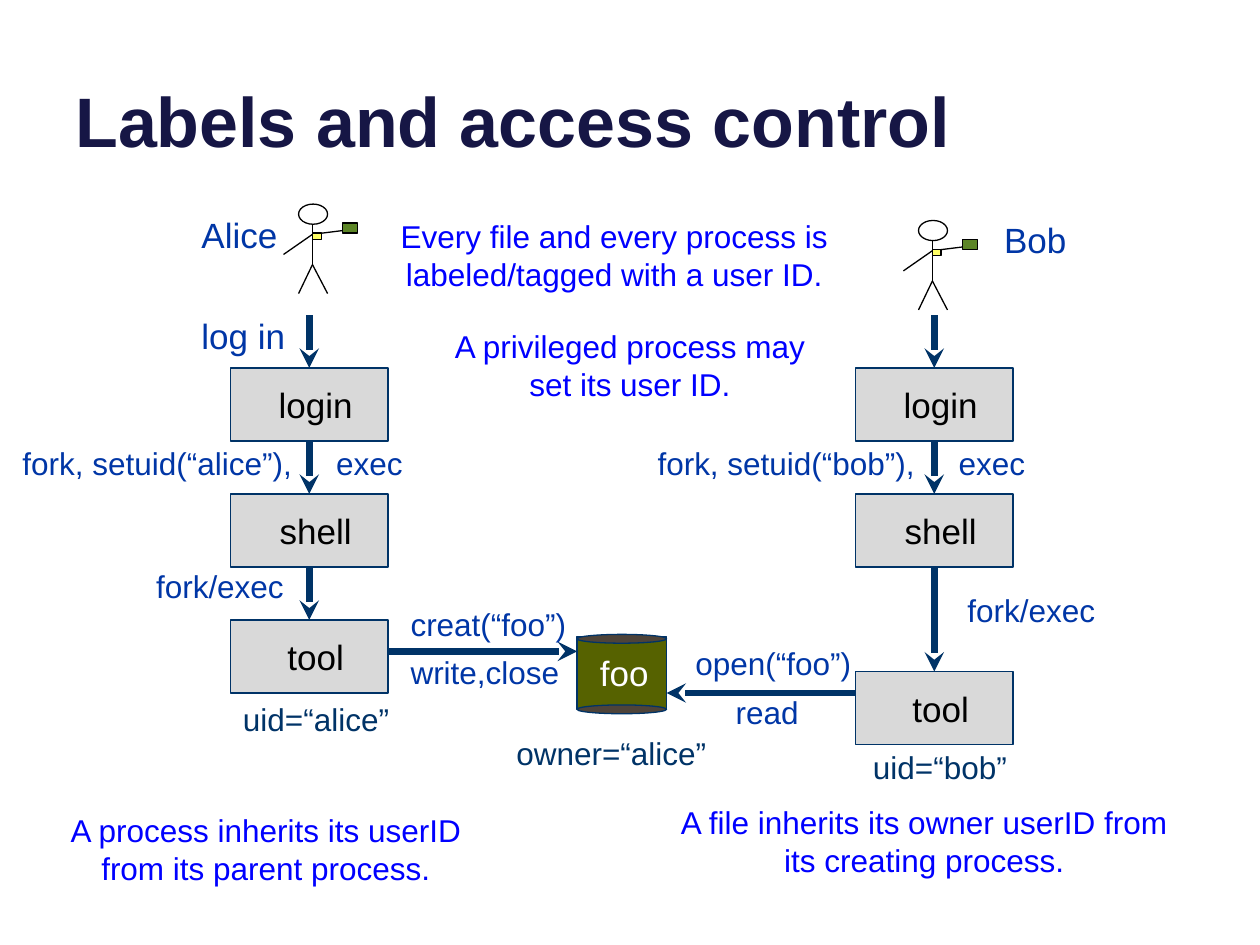
from dataclasses import dataclass

from lxml import etree
from pptx import Presentation
from pptx.dml.color import RGBColor
from pptx.enum.shapes import MSO_CONNECTOR, MSO_SHAPE as Shape
from pptx.enum.text import MSO_ANCHOR as Anchor, PP_ALIGN as Align
from pptx.oxml.ns import qn
from pptx.util import Inches, Pt


@dataclass(frozen=True)
class Theme:
    font: str = "Arial"
    title: str = "161645"
    navy: str = "003367"
    call: str = "0036A6"
    note: str = "0000FF"
    black: str = "000000"
    white: str = "FFFFFF"
    box: str = "D9D9D9"
    disk: str = "566200"
    cap: str = "4E4339"
    card: str = "5C8526"
    badge: str = "FFFF66"
    title_pt: int = 40
    large_pt: int = 20
    body_pt: int = 18
    thin: float = 0.75
    thick: float = 3.75


T = Theme()

TITLE = "Labels and access control"
BOX_W, BOX_H = 1.25, 0.58
FIRST_ARROW_Y = 2.5

# Each user: left edge of the process column, process boxes (name, top), neck of the figure
USERS = [
    (1.83, [("login", 2.92), ("shell", 3.92), ("tool", 4.92)], (2.48, 1.78)),
    (6.79, [("login", 2.92), ("shell", 3.92), ("tool", 5.33)], (7.4, 1.91)),
]

# Lines of the figure, measured from the neck
LIMBS = [
    ((0, 0), (0, 0.32)),
    ((-0.11, 0.55), (0, 0.32)),
    ((0.12, 0.55), (0, 0.32)),
    ((0.32, 0.04), (0, 0.08)),
    ((-0.23, 0.24), (0, 0.08)),
]
FIGURE_PARTS = [
    (Shape.OVAL, (-0.11, -0.16, 0.23, 0.16), None),
    (Shape.RECTANGLE, (0.24, -0.01, 0.12, 0.08), T.card),
    (Shape.RECTANGLE, (0, 0.07, 0.07, 0.05), T.badge),
]

DISK = (4.58, 5.05, 0.71, 0.58)
CAP_H = 0.07
FILE_ARROWS = [((3.08, 5.17), (4.58, 5.17)), ((6.79, 5.5), (5.29, 5.5))]

# Labels: text, left, top, width
NAMES = [
    ("Alice", 1.5, 1.7, 0.92),
    ("Bob", 7.87, 1.74, 0.92),
    ("log in", 1.5, 2.5, 0.92),
]
CALLS = [
    ("fork/exec", 1.14, 4.5, 1.25),
    ("creat(“foo”)", 3.16, 4.8, 1.59),
    ("write,close", 3.16, 5.18, 1.59),
    ("open(“foo”)", 5.42, 5.11, 1.59),
    ("read", 5.74, 5.5, 1.59),
    ("fork/exec", 7.58, 4.69, 1.25),
]
# The last number is the tab stop of the second word group
TABBED_CALLS = [
    ("fork, setuid(“alice”),\texec", 0.08, 3.52, 3.42, 2.49),
    ("fork, setuid(“bob”),\texec", 5.12, 3.52, 3.42, 2.39),
]
IDS = [
    ("owner=“alice”", 4, 5.82, 1.83),
    ("uid=“alice”", 1.83, 5.55, 1.83),
    ("uid=“bob”", 6.83, 5.93, 1.83),
]
NOTES = [
    ("Every file and every process is labeled/tagged with a user ID.", 2.75, 1.67, 4.25),
    ("A privileged process may set its user ID.", 3.5, 2.54, 3),
    ("A process inherits its userID from its parent process.", 0.42, 6.38, 3.38),
    ("A file inherits its owner userID from its creating process.", 5.25, 6.32, 4.17),
]


def rgb(color):
    return RGBColor.from_string(color)


def write(sp, text, size, color, bold=False, align=Align.LEFT,
          anchor=Anchor.TOP, spacing=None):
    tf = sp.text_frame
    tf.word_wrap = True
    tf.vertical_anchor = anchor
    p = tf.paragraphs[0]
    p.alignment = align
    if spacing:
        p.line_spacing = spacing
    r = p.add_run()
    r.text = text
    r.font.name, r.font.size, r.font.bold = T.font, Pt(size), bold
    r.font.color.rgb = rgb(color)
    return p


def add_text(s, text, box, size, color, **style):
    sp = s.shapes.add_textbox(*map(Inches, box))
    return write(sp, text, size, color, **style)


def add_label(s, text, x, y, w, size, color):
    height = 0.4 if size == T.large_pt else 0.37
    return add_text(s, text, (x, y, w, height), size, color, spacing=0.85)


def add_tab_stop(p, pos):
    tabs = etree.SubElement(p._p.get_or_add_pPr(), qn("a:tabLst"))
    etree.SubElement(tabs, qn("a:tab"), pos=str(Inches(pos)), algn="l")


def add_solid(shapes, kind, box, fill, line=T.navy):
    sp = shapes.add_shape(kind, *map(Inches, box))
    sp.shadow.inherit = False
    if fill:
        sp.fill.solid()
        sp.fill.fore_color.rgb = rgb(fill)
    else:
        sp.fill.background()
    sp.line.color.rgb = rgb(line)
    sp.line.width = Pt(T.thin)
    return sp


def add_line(shapes, start, end, color, width, arrow=False):
    c = shapes.add_connector(MSO_CONNECTOR.STRAIGHT, *map(Inches, (*start, *end)))
    c.line.color.rgb = rgb(color)
    c.line.width = Pt(width)
    if arrow:
        etree.SubElement(c.line._get_or_add_ln(), qn("a:tailEnd"), type="stealth")
    etree.SubElement(c._element.spPr, qn("a:effectLst"))


def add_caption(sp, text, color, shift):
    """Centre the text in a shape, moved right by shift inches."""
    tf = sp.text_frame
    tf.margin_left, tf.margin_right = Inches(0.05 + 2 * shift), Inches(0.05)
    write(sp, text, T.large_pt, color, align=Align.CENTER, anchor=Anchor.MIDDLE)


def add_process_column(s, left, processes):
    center, start = left + BOX_W / 2, FIRST_ARROW_Y
    for name, top in processes:
        sp = add_solid(s.shapes, Shape.RECTANGLE, (left, top, BOX_W, BOX_H), T.box)
        add_caption(sp, name, T.black, 0.05)
        add_line(s.shapes, (center, start), (center, top), T.navy, T.thick, arrow=True)
        start = top + BOX_H


def add_figure(s, neck):
    x, y = neck
    group = s.shapes.add_group_shape().shapes
    for (x1, y1), (x2, y2) in LIMBS:
        add_line(group, (x + x1, y + y1), (x + x2, y + y2), T.black, T.thin)
    for kind, (dx, dy, w, h), fill in FIGURE_PARTS:
        add_solid(group, kind, (x + dx, y + dy, w, h), fill, T.black)


def add_disk(s):
    x, y, w, h = DISK
    sp = add_solid(s.shapes, Shape.RECTANGLE, DISK, T.disk)
    add_caption(sp, "foo", T.white, 0.02)
    for edge in (y + 0.02, y + h):
        add_solid(s.shapes, Shape.OVAL, (x, edge - CAP_H / 2, w, CAP_H), T.cap)


def main():
    prs = Presentation()
    prs.slide_width, prs.slide_height = Inches(10), Inches(7.5)
    s = prs.slides.add_slide(prs.slide_layouts[6])

    add_text(s, TITLE, (0.5, -0.37, 9, 1.7), T.title_pt, T.title,
             bold=True, anchor=Anchor.BOTTOM)
    for left, processes, neck in USERS:
        add_process_column(s, left, processes)
        add_figure(s, neck)
    for start, end in FILE_ARROWS:
        add_line(s.shapes, start, end, T.navy, T.thick, arrow=True)
    add_disk(s)

    for labels, size, color in ((NAMES, T.large_pt, T.call),
                                (CALLS, T.body_pt, T.call),
                                (IDS, T.body_pt, T.navy)):
        for label in labels:
            add_label(s, *label, size, color)
    for *label, stop in TABBED_CALLS:
        add_tab_stop(add_label(s, *label, T.body_pt, T.call), stop)
    for text, x, y, w in NOTES:
        add_text(s, text, (x, y, w, 0.71), T.body_pt, T.note,
                 align=Align.CENTER, anchor=Anchor.MIDDLE)
    prs.save("out.pptx")


if __name__ == "__main__":
    main()
